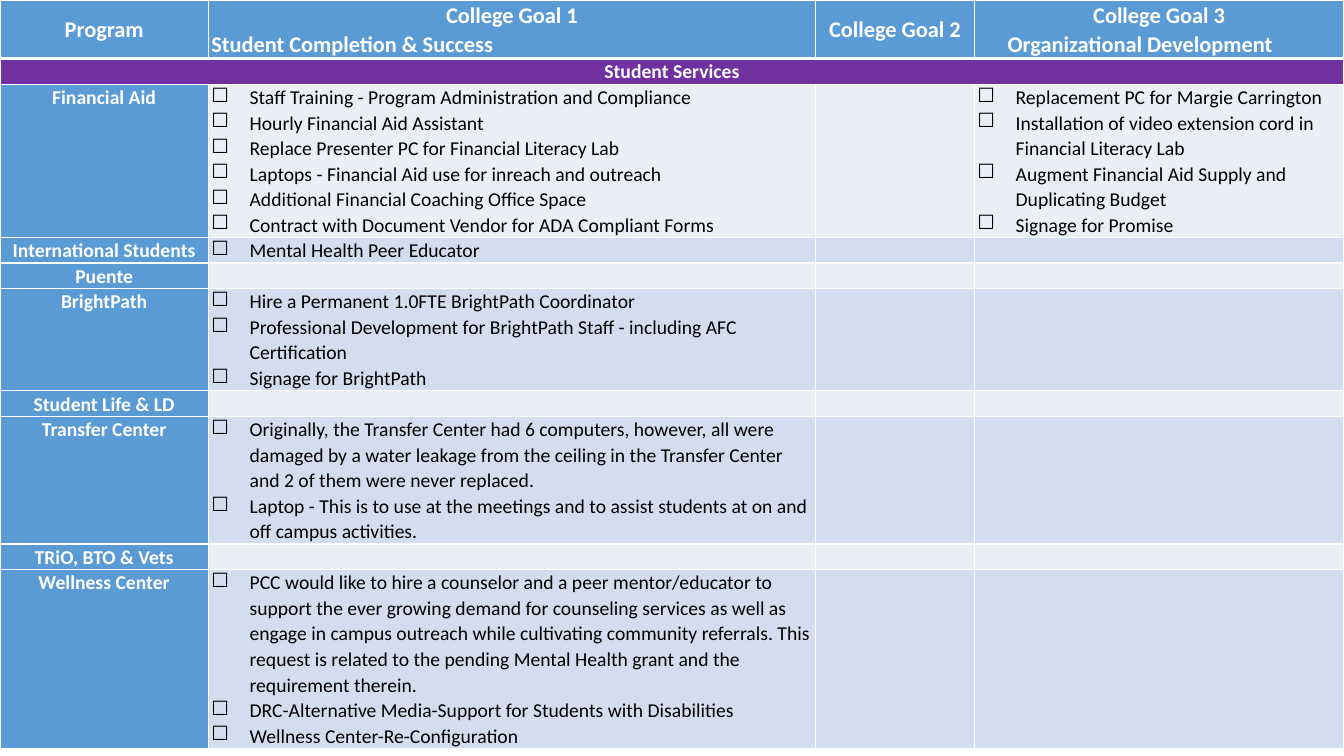
from lxml import etree
from pptx import Presentation, util as u
from pptx.dml.color import RGBColor
from pptx.enum import text as t
from pptx.oxml.ns import qn

COLORS = {"blue": "5B9BD5", "purple": "7030A0", "light": "EAEFF7",
          "mid": "D2DEEF", "white": "FFFFFF", "black": "000000"}
COLUMN_PERCENTS = (15.5, 45.2, 11.8, 27.5)
LINE_PERCENT = 3.38  # height of one body line, as a share of the page
HEADER_LINES = 2.25

# program, lines of text in the row, goal 1 requests, goal 3 requests
PROGRAMS = [
    ("Financial Aid", 6,
     ["Staff Training - Program Administration and Compliance",
      "Hourly Financial Aid Assistant",
      "Replace Presenter PC for Financial Literacy Lab",
      "Laptops - Financial Aid use for inreach and outreach",
      "Additional Financial Coaching Office Space",
      "Contract with Document Vendor for ADA Compliant Forms"],
     ["Replacement PC for Margie Carrington",
      "Installation of video extension cord in Financial Literacy Lab",
      "Augment Financial Aid Supply and Duplicating Budget",
      "Signage for Promise"]),
    ("International Students", 1, ["Mental Health Peer Educator"], []),
    ("Puente", 1, [], []),
    ("BrightPath", 4,
     ["Hire a Permanent 1.0FTE BrightPath Coordinator",
      "Professional Development for BrightPath Staff - including AFC Certification",
      "Signage for BrightPath"], []),
    ("Student Life & LD", 1, [], []),
    ("Transfer Center", 5,
     ["Originally, the Transfer Center had 6 computers, however, all were damaged by a water "
      "leakage from the ceiling in the Transfer Center and 2 of them were never replaced.",
      "Laptop - This is to use at the meetings and to assist students at on and "
      "off campus activities."], []),
    ("TRiO, BTO & Vets", 1, [], []),
    ("Wellness Center", 7,
     ["PCC would like to hire a counselor and a peer mentor/educator to support the ever "
      "growing demand for counseling services as well as engage in campus outreach while "
      "cultivating community referrals. This request is related to the pending Mental Health "
      "grant and the requirement therein.",
      "DRC-Alternative Media-Support for Students with Disabilities",
      "Wellness Center-Re-Configuration"], []),
]


class Page:
    """Holds the deck, its one slide and the style of the table on it."""

    font_name = "Calibri"
    header_size, body_size = 16, 14
    line_spacing = 1.07
    inset = u.Inches(0.03)
    indent = u.Inches(0.38)

    def __init__(self):
        self.deck = Presentation()
        self.deck.slide_width = u.Inches(13.33)
        self.deck.slide_height = u.Inches(7.5)
        self.slide = self.deck.slides.add_slide(self.deck.slide_layouts[6])

    def table(self, column_percents, row_lines):
        """Add a full-width table; row heights count lines of body text."""
        width = self.deck.slide_width
        line = self.deck.slide_height * LINE_PERCENT / 100
        frame = self.slide.shapes.add_table(
            len(row_lines), len(column_percents), 0, 0, width, int(line * sum(row_lines)))
        for column, percent in zip(frame.table.columns, column_percents):
            column.width = int(width * percent / 100)
        for row, lines in zip(frame.table.rows, row_lines):
            row.height = int(line * lines)
        return frame.table

    def cell(self, cell, fill, top=1, bottom=1, middle=False):
        cell.fill.solid()
        cell.fill.fore_color.rgb = RGBColor.from_string(COLORS[fill])
        cell.margin_left = cell.margin_right = self.inset
        cell.margin_top = cell.margin_bottom = 0
        cell.vertical_anchor = t.MSO_ANCHOR.MIDDLE if middle else t.MSO_ANCHOR.TOP
        properties = cell._tc.get_or_add_tcPr()
        edges = (("lnL", 1), ("lnR", 1), ("lnT", top), ("lnB", bottom))
        for place, (edge, points) in enumerate(edges):
            border = etree.Element(qn(f"a:{edge}"), w=str(u.Pt(points)))
            solid = etree.SubElement(border, qn("a:solidFill"))
            etree.SubElement(solid, qn("a:srgbClr"), val=COLORS["white"])
            properties.insert(place, border)

    def text(self, cell, lines, size=None, color="white", bold=True, centered=True, bullet=None):
        frame = cell.text_frame
        frame.text = "\n".join(lines)
        for para in frame.paragraphs:
            para.line_spacing = self.line_spacing
            para.alignment = t.PP_ALIGN.CENTER if centered else t.PP_ALIGN.LEFT
            font = para.font
            font.name, font.size, font.bold = self.font_name, u.Pt(size or self.body_size), bold
            font.color.rgb = RGBColor.from_string(COLORS[color])
            if not para.text:
                etree.SubElement(para._p, qn("a:endParaRPr"), sz=str(self.body_size * 100))
            elif bullet:
                self.bullet(para, bullet)

    def bullet(self, para, mark):
        properties = para._p.get_or_add_pPr()
        properties.set("marL", str(self.indent))
        properties.set("indent", str(-self.indent))
        sign = etree.Element(qn("a:buChar"), char=mark)
        properties.find(qn("a:defRPr")).addprevious(sign)


def fill_header(page, table):
    headings = (["Program"],
                ["College Goal 1", "Student Completion & Success"],
                ["College Goal 2"],
                ["College Goal 3", "Organizational Development"])
    for column, lines in enumerate(headings):
        cell = table.cell(0, column)
        page.cell(cell, "blue", bottom=3, middle=True)
        page.text(cell, lines, size=page.header_size)
        for para in cell.text_frame.paragraphs[1:]:
            para.alignment = t.PP_ALIGN.LEFT
    goal_3_name = table.cell(0, 3).text_frame.paragraphs[1]
    goal_3_name._p.get_or_add_pPr().set("marL", str(u.Inches(0.3)))


def fill_division(page, table):
    for column in range(len(COLUMN_PERCENTS)):
        page.cell(table.cell(1, column), "purple", top=3, middle=True)
    table.cell(1, 0).merge(table.cell(1, len(COLUMN_PERCENTS) - 1))
    page.text(table.cell(1, 0), ["Student Services"])


def fill_programs(page, table):
    for index, (program, _, goal_1, goal_3) in enumerate(PROGRAMS):
        band = "mid" if index % 2 else "light"
        row = index + 2
        page.cell(table.cell(row, 0), "blue")
        page.text(table.cell(row, 0), [program])
        for column, requests in enumerate((goal_1, [], goal_3), start=1):
            cell = table.cell(row, column)
            page.cell(cell, band)
            page.text(cell, requests, color="black", bold=False, centered=False, bullet="☐")


def main():
    page = Page()
    row_lines = [HEADER_LINES, 1] + [lines for _, lines, _, _ in PROGRAMS]
    table = page.table(COLUMN_PERCENTS, row_lines)
    fill_header(page, table)
    fill_division(page, table)
    fill_programs(page, table)
    page.deck.save("out.pptx")


if __name__ == "__main__":
    main()
